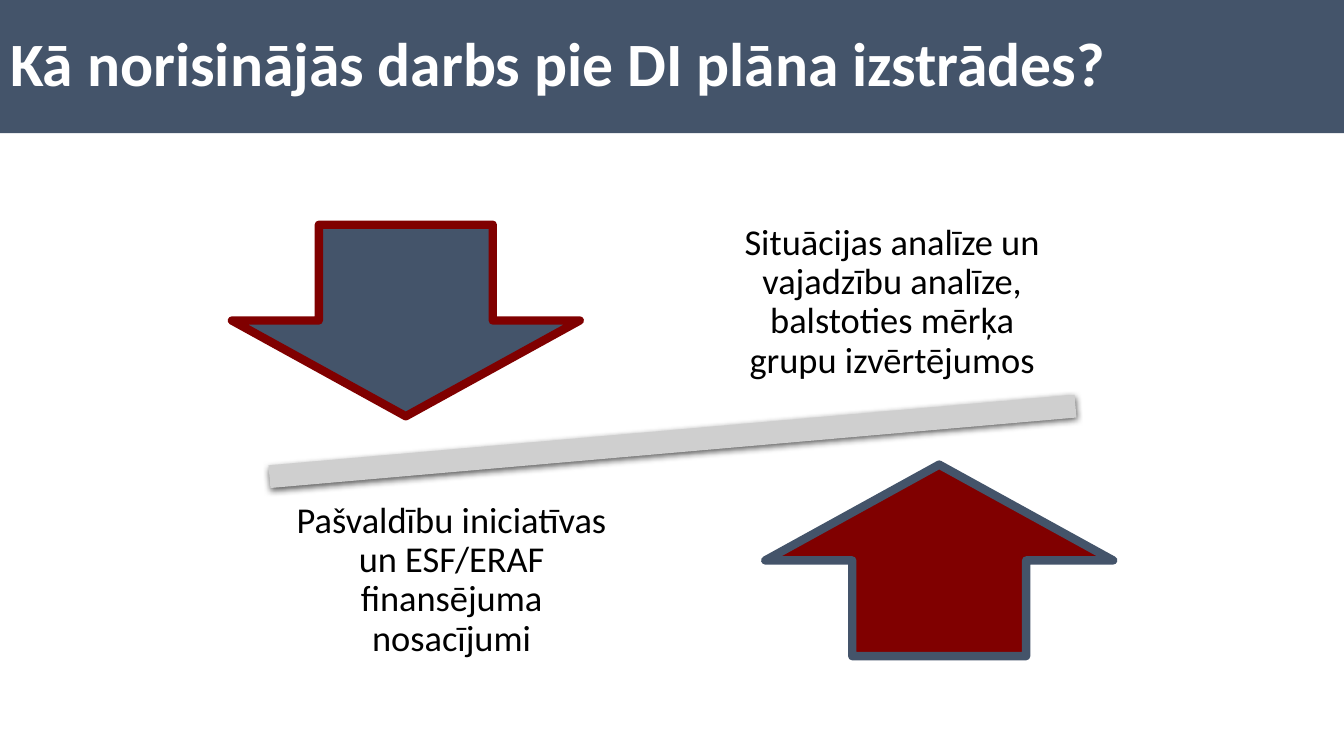
"""Builds a slide on the two forces that shaped the DI plan, balanced on a tilted bar."""
from lxml.etree import SubElement
from pptx import Presentation
from pptx.dml.color import RGBColor
from pptx.enum.shapes import MSO_SHAPE
from pptx.enum.text import MSO_ANCHOR, MSO_AUTO_SIZE, PP_ALIGN
from pptx.oxml.ns import qn
from pptx.util import Inches, Pt

COLORS = {"slate": "44546A", "maroon": "800000", "bar": "CFCFCF",
          "white": "FFFFFF", "black": "000000"}


def color(name):
    return RGBColor.from_string(COLORS[name])


def write(shape, text, size=26, ink="black", bold=False, align=PP_ALIGN.CENTER, inset=0.2):
    frame = shape.text_frame
    frame.word_wrap = True
    frame.auto_size = MSO_AUTO_SIZE.NONE
    frame.vertical_anchor = MSO_ANCHOR.MIDDLE
    frame.margin_left = frame.margin_right = Inches(inset)
    frame.margin_top = frame.margin_bottom = Inches(inset)
    paragraph = frame.paragraphs[0]
    paragraph.alignment = align
    paragraph.line_spacing = 0.9
    run = paragraph.add_run()
    run.text = text
    run.font.name = "Calibri"
    run.font.size = Pt(size)
    run.font.bold = bold
    run.font.color.rgb = color(ink)


deck = Presentation()
deck.slide_width, deck.slide_height = Inches(13.33), Inches(7.5)
slide = deck.slides.add_slide(deck.slide_layouts[5])
shapes = slide.shapes

heading = shapes.title
heading.left, heading.top = 0, 0
heading.width, heading.height = deck.slide_width, Inches(1.32)
heading.fill.solid()
heading.fill.fore_color.rgb = color("slate")
write(heading, "Kā norisinājās darbs pie DI plāna izstrādes?", size=44, ink="white",
      bold=True, align=PP_ALIGN.LEFT, inset=0.1)

balance = shapes.add_shape(MSO_SHAPE.MATH_MINUS, Inches(1.21), Inches(3.9),
                           Inches(10.92), Inches(0.96))
balance.rotation = 355
balance.fill.solid()
balance.fill.fore_color.rgb = color("bar")
balance.line.fill.background()
balance.shadow.inherit = False
effects = balance._element.spPr.find(qn("a:effectLst"))
shadow = SubElement(effects, qn("a:outerShdw"), blurRad=str(Pt(4.5)), dist=str(Pt(1.5)),
                    dir="5400000", algn="ctr", rotWithShape="0")
shade = SubElement(shadow, qn("a:srgbClr"), val=COLORS["black"])
SubElement(shade, qn("a:alpha"), val="63000")

forces = [
    (MSO_SHAPE.DOWN_ARROW, 2.3, 2.23, "slate", "maroon"),
    (MSO_SHAPE.UP_ARROW, 7.59, 4.61, "maroon", "slate"),
]
for direction, left, top, body, edge in forces:
    force = shapes.add_shape(direction, Inches(left), Inches(top), Inches(3.45), Inches(1.9))
    force.fill.solid()
    force.fill.fore_color.rgb = color(body)
    force.line.color.rgb = color(edge)
    force.line.width = Pt(6)
    SubElement(force._element.spPr.find(qn("a:ln")), qn("a:round"))
    force.shadow.inherit = False

reasons = [
    (7.01, 2, 3.68, "Situācijas analīze un vajadzību analīze, balstoties mērķa grupu izvērtējumos"),
    (2.72, 4.76, 3.52, "Pašvaldību iniciatīvas un ESF/ERAF finansējuma nosacījumi"),
]
for left, top, width, text in reasons:
    reason = shapes.add_textbox(Inches(left), Inches(top), Inches(width), Inches(2))
    write(reason, text)

deck.save("out.pptx")
